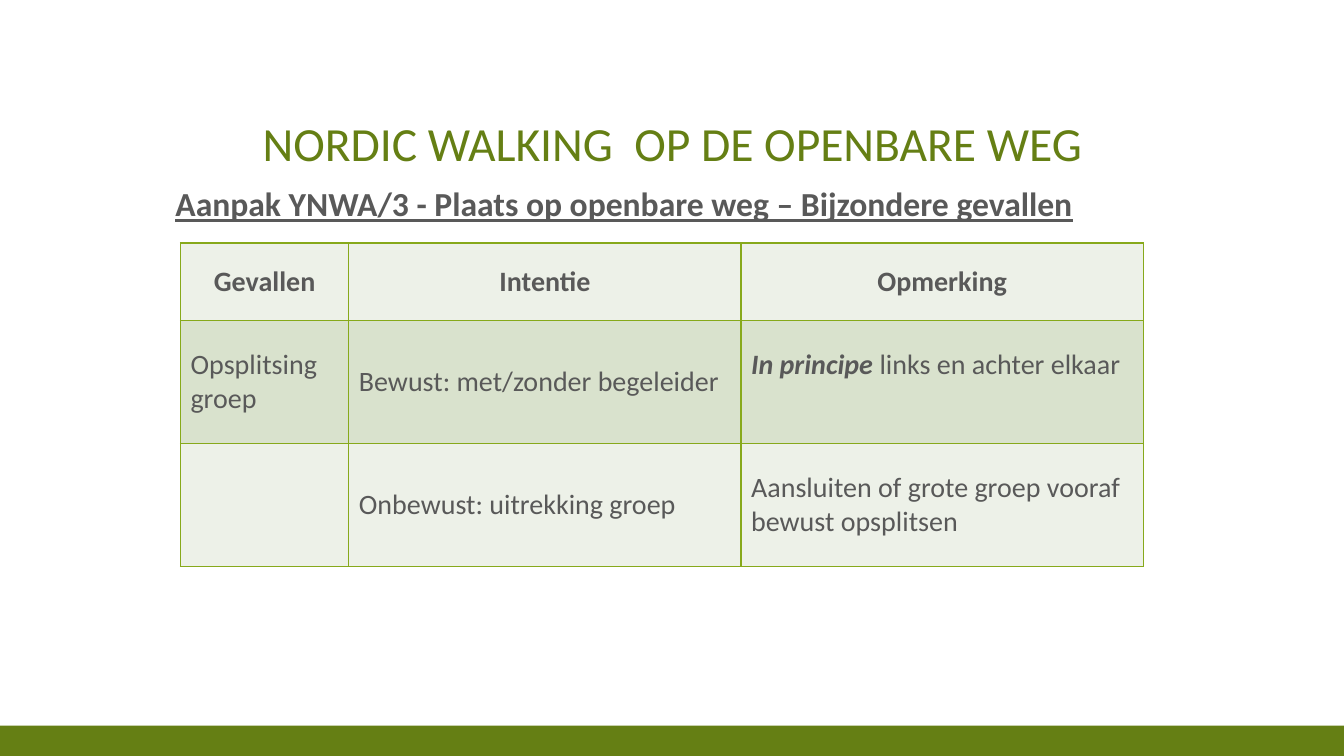
from lxml import etree
from pptx import Presentation
from pptx.dml.color import RGBColor
from pptx.enum import shapes, text
from pptx.oxml.ns import qn
from pptx.util import Inches, Pt

COLORS = {"green": "657F14", "body": "595959", "border": "87A91B",
          "light": "EDF1E8", "dark": "D9E2CD"}
COLUMN_WIDTHS = [1.67, 3.89, 3.99]
ROW_HEIGHTS = [0.77, 1.22, 1.22]
# Each cell is a list of (text, emphasised) runs.
CASES = [
    [[("Gevallen", False)], [("Intentie", False)], [("Opmerking", False)]],
    [[("Opsplitsing groep", False)],
     [("Bewust: met/zonder begeleider", False)],
     [("In principe ", True), ("links en achter elkaar", False)]],
    [[], [("Onbewust: uitrekking groep", False)],
     [("Aansluiten of grote groep vooraf bewust opsplitsen", False)]],
]


def rgb(name):
    return RGBColor.from_string(COLORS[name])


def style(paragraph, size, color, bold=False):
    font = paragraph.font
    font.name, font.size, font.bold = "Calibri", Pt(size), bold
    font.color.rgb = rgb(color)


def add_footer_band(slide, left, top, width, height):
    band = slide.shapes.add_shape(
        shapes.MSO_SHAPE.RECTANGLE,
        Inches(left), Inches(top), Inches(width), Inches(height))
    band.shadow.inherit = False
    band.fill.solid()
    band.fill.fore_color.rgb = rgb("green")
    band.line.fill.background()


def set_title(slide, left, top, width, height):
    title = slide.shapes.title
    title.left, title.top = Inches(left), Inches(top)
    title.width, title.height = Inches(width), Inches(height)
    frame = title.text_frame
    frame.text = "NORDIC WALKING  OP DE OPENBARE WEG"
    frame.auto_size = text.MSO_AUTO_SIZE.NONE
    frame.vertical_anchor = text.MSO_ANCHOR.BOTTOM
    heading = frame.paragraphs[0]
    heading.alignment = text.PP_ALIGN.CENTER
    heading.line_spacing = 0.9
    style(heading, 34, "green")


def add_subtitle(slide, left, top, width, height):
    frame = slide.shapes.add_textbox(
        Inches(left), Inches(top), Inches(width), Inches(height)).text_frame
    frame.word_wrap = True
    frame.margin_left = Inches(0.15)
    subtitle = frame.paragraphs[0]
    subtitle.text = "Aanpak YNWA/3 - Plaats op openbare weg – Bijzondere gevallen"
    subtitle.line_spacing = 0.7
    style(subtitle, 24, "body", bold=True)
    subtitle.font.underline = True


def set_cell_look(cell, fill):
    """Draw the four borders, then fill the cell."""
    properties = cell._tc.get_or_add_tcPr()
    for side in ("lnL", "lnR", "lnT", "lnB"):
        line = etree.SubElement(properties, qn(f"a:{side}"), w=str(Pt(1)))
        solid = etree.SubElement(line, qn("a:solidFill"))
        etree.SubElement(solid, qn("a:srgbClr"), val=COLORS["border"])
    cell.fill.solid()
    cell.fill.fore_color.rgb = rgb(fill)


def add_cases_table(slide, left, top):
    table = slide.shapes.add_table(
        len(ROW_HEIGHTS), len(COLUMN_WIDTHS), Inches(left), Inches(top),
        Inches(sum(COLUMN_WIDTHS)), Inches(sum(ROW_HEIGHTS))).table
    for column, width in zip(table.columns, COLUMN_WIDTHS):
        column.width = Inches(width)
    for row, height in zip(table.rows, ROW_HEIGHTS):
        row.height = Inches(height)
    for r, case in enumerate(CASES):
        for c, runs in enumerate(case):
            cell = table.cell(r, c)
            set_cell_look(cell, "dark" if r % 2 else "light")
            cell.vertical_anchor = text.MSO_ANCHOR.MIDDLE
            paragraph = cell.text_frame.paragraphs[0]
            if r == 0:
                paragraph.alignment = text.PP_ALIGN.CENTER
            style(paragraph, 20, "body", bold=r == 0)
            for words, emphasised in runs:
                run = paragraph.add_run()
                run.text = words
                # The table style bolds headers, so weight is set per run.
                run.font.bold = emphasised or r == 0
                run.font.italic = emphasised
                run.font.name, run.font.size = "Calibri", Pt(20)
                run.font.color.rgb = rgb("body")
    # Lift the one-line remark to the first line of its two-line neighbour.
    table.cell(1, 2).margin_bottom = Inches(0.39)


def main():
    deck = Presentation()
    deck.slide_width, deck.slide_height = Inches(13.33), Inches(7.5)
    slide = deck.slides.add_slide(deck.slide_layouts[5])
    add_footer_band(slide, 0, 7.2, 13.33, 0.3)
    set_title(slide, 1.67, 0.5, 10, 1.25)
    add_subtitle(slide, 1.59, 1.88, 9.86, 0.43)
    add_cases_table(slide, 1.79, 2.41)
    deck.save("out.pptx")


if __name__ == "__main__":
    main()
